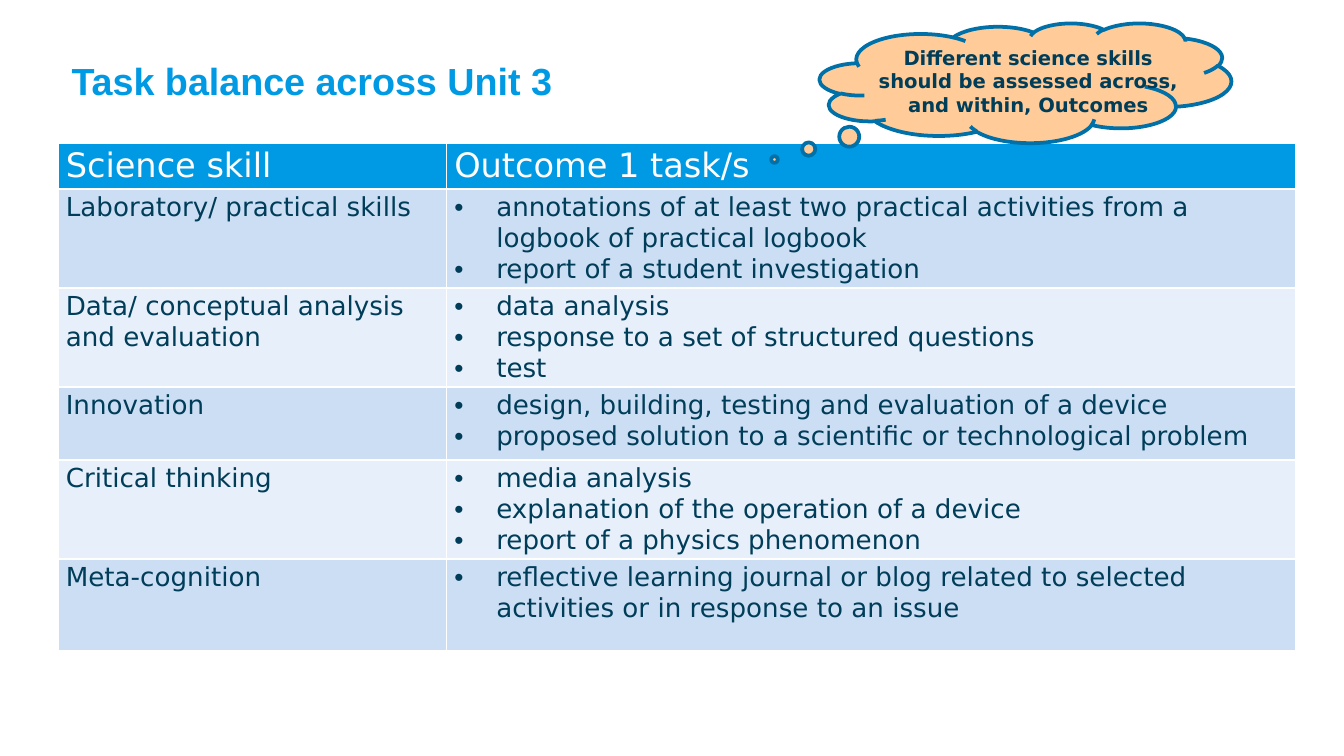
"""Build the slide on task balance across Unit 3."""
from dataclasses import dataclass

from lxml.etree import SubElement
from pptx import Presentation
from pptx.dml.color import RGBColor
from pptx.enum.shapes import MSO_SHAPE
from pptx.enum.text import MSO_ANCHOR, MSO_AUTO_SIZE, PP_ALIGN
from pptx.oxml.ns import qn
from pptx.util import Emu, Pt

PX = 4762.5
COLORS = {
    "blue": "0099E3",
    "outline": "0071A8",
    "ink": "003D59",
    "white": "FFFFFF",
    "band_dark": "CCDEF4",
    "band_light": "E7EFFA",
    "peach": "FFCC99",
}


@dataclass(frozen=True)
class SkillRow:
    skill: str
    tasks: tuple[str, ...]
    height: int


HEADERS = ("Science skill", "Outcome 1 task/s")
HEADER_HEIGHT = 65
COLUMN_WIDTHS = (555, 1213)
ROWS = (
    SkillRow(
        "Laboratory/ practical skills",
        (
            "annotations of at least two practical activities from a logbook of practical logbook",
            "report of a student investigation",
        ),
        138,
    ),
    SkillRow(
        "Data/ conceptual analysis and evaluation",
        ("data analysis", "response to a set of structured questions", "test"),
        138,
    ),
    SkillRow(
        "Innovation",
        (
            "design, building, testing and evaluation of a device",
            "proposed solution to a scientific or technological problem",
        ),
        104,
    ),
    SkillRow(
        "Critical thinking",
        (
            "media analysis",
            "explanation of the operation of a device",
            "report of a physics phenomenon",
        ),
        138,
    ),
    SkillRow(
        "Meta-cognition",
        ("reflective learning journal or blog related to selected activities or in response to an issue",),
        132,
    ),
)


def px(n: int) -> Emu:
    """Turn px into EMU."""
    return Emu(round(n * PX))


def rgb(name: str) -> RGBColor:
    """Look up a named colour."""
    return RGBColor.from_string(COLORS[name])


def add_bullet(p) -> None:
    """Give a paragraph a round bullet with a hanging indent."""
    pPr = p._p.get_or_add_pPr()
    pPr.set("marL", str(px(60)))
    pPr.set("indent", str(px(-60)))
    SubElement(pPr, qn("a:buFont")).set("typeface", "Arial")
    SubElement(pPr, qn("a:buChar")).set("char", "•")


def write(tf, *texts: str, size: float, color: str, font: str = "DejaVu Sans",
          bold: bool = False, align=PP_ALIGN.LEFT, bullet: bool = False) -> None:
    """Fill a text frame with one formatted paragraph per text."""
    for i, text in enumerate(texts):
        p = tf.add_paragraph() if i else tf.paragraphs[0]
        if bullet:
            add_bullet(p)
        p.alignment = align
        r = p.add_run()
        r.text = text
        r.font.size = Pt(size)
        r.font.name = font
        r.font.bold = bold
        r.font.color.rgb = rgb(color)


def add_title(s, text: str) -> None:
    """Place and format the title placeholder."""
    sp = s.shapes.title
    sp.left, sp.top, sp.width, sp.height = map(px, (83, 68, 1315, 94))
    tf = sp.text_frame
    tf.auto_size = MSO_AUTO_SIZE.NONE
    tf.vertical_anchor = MSO_ANCHOR.MIDDLE
    write(tf, text, size=20.2, color="blue", font="Arial", bold=True)


def style_cell(cell, fill: str) -> None:
    """Set the fill and margins of a cell."""
    cell.fill.solid()
    cell.fill.fore_color.rgb = rgb(fill)
    cell.margin_left = cell.margin_right = px(11)
    cell.margin_top = cell.margin_bottom = px(5)


def add_skill_table(s) -> None:
    """Draw the table of skills and tasks."""
    heights = [HEADER_HEIGHT] + [row.height for row in ROWS]
    table = s.shapes.add_table(len(heights), len(HEADERS), px(83), px(204),
                               px(sum(COLUMN_WIDTHS)), px(sum(heights))).table
    for column, width in zip(table.columns, COLUMN_WIDTHS):
        column.width = px(width)
    for row, height in zip(table.rows, heights):
        row.height = px(height)
    for c, text in enumerate(HEADERS):
        cell = table.cell(0, c)
        style_cell(cell, "blue")
        write(cell.text_frame, text, size=18, color="white")
    for i, row in enumerate(ROWS, 1):
        for c, texts in enumerate(((row.skill,), row.tasks)):
            cell = table.cell(i, c)
            style_cell(cell, "band_dark" if i % 2 else "band_light")
            write(cell.text_frame, *texts, size=14, color="ink", bullet=c == 1)


def add_callout(s, text: str) -> None:
    """Draw the thought cloud and its text."""
    sp = s.shapes.add_shape(MSO_SHAPE.CLOUD_CALLOUT, px(1171), px(33), px(588), px(171))
    sp.shadow.inherit = False
    sp.adjustments[0], sp.adjustments[1] = -0.61, 0.64
    sp.fill.solid()
    sp.fill.fore_color.rgb = rgb("peach")
    sp.line.color.rgb = rgb("outline")
    sp.line.width = Pt(2)
    tf = s.shapes.add_textbox(px(1233), px(56), px(472), px(121)).text_frame
    tf.word_wrap = True
    tf.auto_size = MSO_AUTO_SIZE.SHAPE_TO_FIT_TEXT
    write(tf, text, size=10.5, color="ink", bold=True, align=PP_ALIGN.CENTER)


def main() -> None:
    """Build and save the presentation."""
    prs = Presentation()
    prs.slide_width, prs.slide_height = px(1920), px(1080)
    s = prs.slides.add_slide(prs.slide_layouts[5])
    add_title(s, "Task balance across Unit 3")
    add_skill_table(s)
    add_callout(s, "Different science skills should be assessed across, and within, Outcomes")
    prs.save("out.pptx")


if __name__ == "__main__":
    main()
